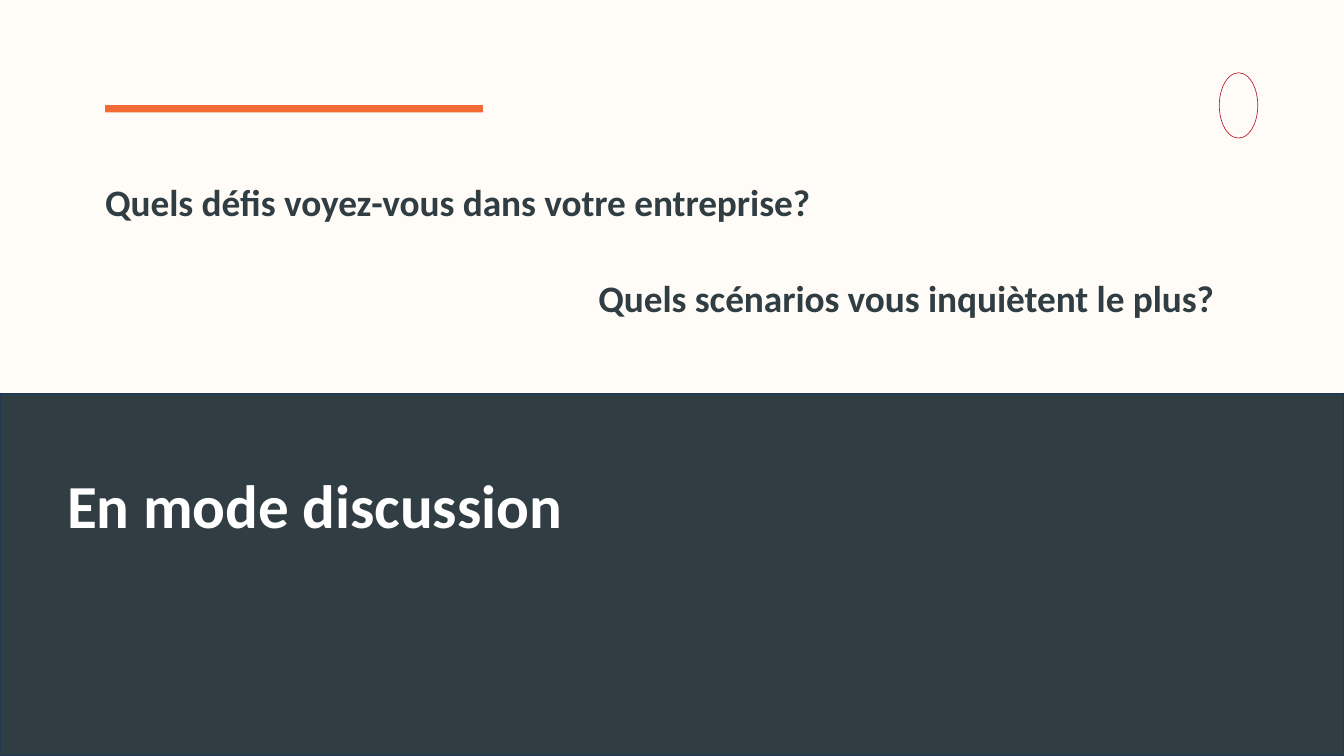
from pptx import Presentation
from pptx.dml.color import RGBColor
from pptx.enum.shapes import MSO_SHAPE
from pptx.enum.text import MSO_ANCHOR, MSO_AUTO_SIZE, PP_ALIGN
from pptx.util import Inches, Pt

# Content: text and its left, top, width, height in inches
TITLE = ("En mode discussion", (1.1, 7.44, 19.65, 1.42))
QUESTIONS = [
    ("Quels défis voyez-vous dans votre entreprise?", (1.72, 2.73, 16.19, 0.95)),
    ("Quels scénarios vous inquiètent le plus?", (9.79, 4.31, 10.79, 0.95)),
]

SLIDE_W, SLIDE_H = 21.99, 12.37
PANEL_TOP = 6.45


class Theme:
    font = "Calibri"
    paper = RGBColor.from_string("FFFCF8")
    dark = RGBColor.from_string("303D42")
    edge = RGBColor.from_string("233953")
    accent = RGBColor.from_string("F26B36")
    emblem = RGBColor.from_string("BA2130")
    white = RGBColor.from_string("FFFFFF")
    title_size = Pt(72)
    question_size = Pt(44)


def add_shape(slide, kind, box, fill=None, line=None, width=0):
    sp = slide.shapes.add_shape(kind, *map(Inches, box))
    sp.shadow.inherit = False
    for part, color in ((sp.fill, fill), (sp.line.fill, line)):
        if color is None:
            part.background()
        else:
            part.solid()
            part.fore_color.rgb = color
    if line is not None:
        sp.line.width = Pt(width)
    return sp


def set_text(sp, text, box, size, color):
    sp.left, sp.top, sp.width, sp.height = map(Inches, box)
    tf = sp.text_frame
    frame_format = {
        "word_wrap": True, "auto_size": MSO_AUTO_SIZE.NONE,
        "vertical_anchor": MSO_ANCHOR.TOP, "margin_left": 0,
        "margin_top": Inches(0.2), "margin_right": 0, "margin_bottom": 0,
    }
    for name, value in frame_format.items():
        setattr(tf, name, value)
    p = tf.paragraphs[0]
    for name, value in {"alignment": PP_ALIGN.LEFT, "line_spacing": 1.0,
                        "space_before": Pt(0)}.items():
        setattr(p, name, value)
    r = p.add_run()
    r.text = text
    for name, value in {"name": Theme.font, "size": size, "bold": True}.items():
        setattr(r.font, name, value)
    r.font.color.rgb = color
    r.font._element.set("spc", "-10")


def main():
    prs = Presentation()
    prs.slide_width, prs.slide_height = Inches(SLIDE_W), Inches(SLIDE_H)
    slide = prs.slides.add_slide(prs.slide_layouts[5])
    slide.background.fill.solid()
    slide.background.fill.fore_color.rgb = Theme.paper

    # Dark lower panel, placed behind the title
    panel = add_shape(slide, MSO_SHAPE.RECTANGLE,
                      (0, PANEL_TOP, SLIDE_W, SLIDE_H - PANEL_TOP),
                      Theme.dark, Theme.edge, 2)
    slide.shapes.title._element.addprevious(panel._element)

    # Title and questions
    set_text(slide.shapes.title, *TITLE, Theme.title_size, Theme.white)
    for text, box in QUESTIONS:
        sp = slide.shapes.add_textbox(*map(Inches, box))
        set_text(sp, text, box, Theme.question_size, Theme.dark)

    # Accent bar and plain emblem
    add_shape(slide, MSO_SHAPE.RECTANGLE, (1.72, 1.72, 6.18, 0.12), Theme.accent)
    add_shape(slide, MSO_SHAPE.OVAL, (19.95, 1.19, 0.63, 1.07),
              line=Theme.emblem, width=0.82)

    prs.save("out.pptx")


if __name__ == "__main__":
    main()
